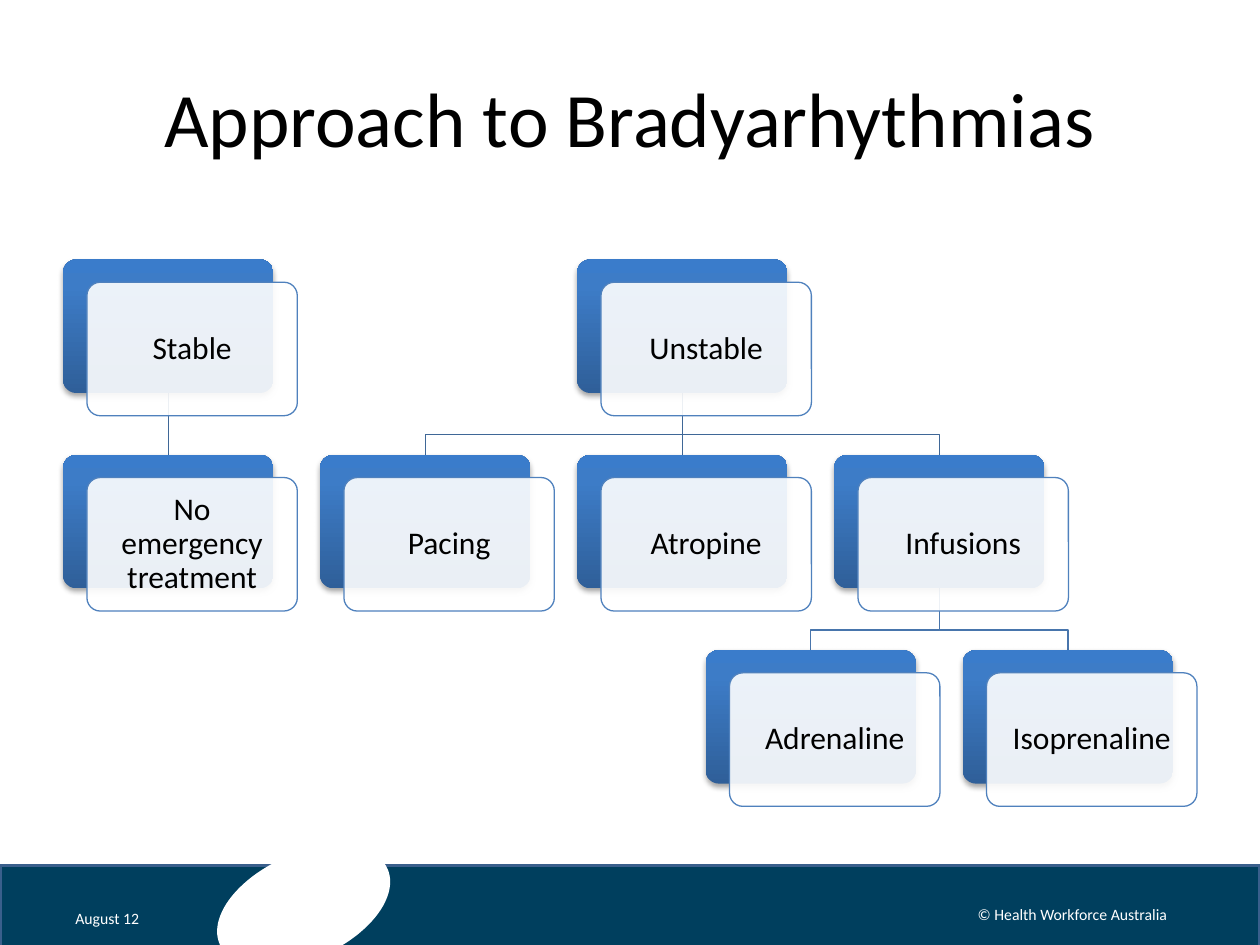
"""Build the slide on the approach to bradyarrhythmias as a decision tree."""
import pptx
import pptx.dml.color
import pptx.enum.shapes
import pptx.enum.text
import pptx.oxml
import pptx.util

Inches = pptx.util.Inches
Pt = pptx.util.Pt
Color = pptx.dml.color.RGBColor.from_string
Shape = pptx.enum.shapes.MSO_SHAPE
Align = pptx.enum.text.PP_ALIGN
Middle = pptx.enum.text.MSO_ANCHOR.MIDDLE
NS = 'xmlns:a="http://schemas.openxmlformats.org/drawingml/2006/main"'


class Theme:
    font = "Calibri"
    ink = "000000"
    paper = "FFFFFF"
    band = "003F5E"
    rim = "3A5F8C"
    edge = "4F81BD"
    links = {1: "3F6797", 2: "4875AC"}
    stops = ((0, "2F5F99"), (80, "3D7CC7"), (100, "3A7CCB"))
    title, label, foot = 44, 18, 9


def write(shape, text, size, color, align):
    frame = shape.text_frame
    frame.word_wrap = True
    frame.vertical_anchor = Middle
    para = frame.paragraphs[0]
    para.text = text
    para.alignment = align
    para.font.name = Theme.font
    para.font.size = Pt(size)
    para.font.color.rgb = Color(color)
    return para


def draw(kind, left, top, width, height, fill=None, line=None, weight=0.75):
    shape = slide.shapes.add_shape(
        kind, Inches(left), Inches(top), Inches(width), Inches(height))
    shape.shadow.inherit = False
    if fill:
        shape.fill.solid()
        shape.fill.fore_color.rgb = Color(fill)
    if line:
        shape.line.color.rgb = Color(line)
        shape.line.width = Pt(weight)
    else:
        shape.line.fill.background()
    return shape


deck = pptx.Presentation()
deck.slide_width, deck.slide_height = Inches(10), Inches(7.5)
slide = deck.slides.add_slide(deck.slide_layouts[5])
for spot in list(slide.placeholders):
    if spot != slide.shapes.title:
        spot.element.getparent().remove(spot.element)

title = slide.shapes.title
title.left, title.top = Inches(0.5), Inches(0.3)
title.width, title.height = Inches(9), Inches(1.25)
write(title, "Approach to Bradyarhythmias", Theme.title, Theme.ink, Align.CENTER)

draw(Shape.RECTANGLE, 0, 6.87, 10, 0.65, Theme.band, Theme.rim, 2)
oval = draw(Shape.OVAL, 1.68, 6.78, 1.46, 0.83, Theme.paper)
oval.rotation = 335.7

wide, high = 1.67, 1.06
left, top = 0.5, 2.06
step, drop = 2.04, 1.55
tree = {
    "Stable": (0, 0, None),
    "No emergency treatment": (0, 1, "Stable"),
    "Unstable": (2, 0, None),
    "Pacing": (1, 1, "Unstable"),
    "Atropine": (2, 1, "Unstable"),
    "Infusions": (3, 1, "Unstable"),
    "Adrenaline": (2.5, 2, "Infusions"),
    "Isoprenaline": (3.5, 2, "Infusions"),
}

for col, row, parent in tree.values():
    if parent is None:
        continue
    start = Inches(left + step * tree[parent][0] + wide / 2)
    end = Inches(left + step * col + wide / 2)
    base = Inches(top + drop * (row - 1) + high)
    bend = base + Inches(0.33)
    head = Inches(top + drop * row)
    if start == end:
        link = slide.shapes.add_connector(
            pptx.enum.shapes.MSO_CONNECTOR.STRAIGHT, start, base, end, head)
        link.element.spPr.append(pptx.oxml.parse_xml(f"<a:effectLst {NS}/>"))
    else:
        path = slide.shapes.build_freeform(start, base)
        path.add_line_segments([(start, bend), (end, bend), (end, head)], close=False)
        link = path.convert_to_shape()
        link.shadow.inherit = False
        link.fill.background()
    link.line.color.rgb = Color(Theme.links[row])
    link.line.width = Pt(0.75)

stops = "".join(
    f'<a:gs pos="{pos * 1000}"><a:srgbClr val="{tone}"/></a:gs>'
    for pos, tone in Theme.stops)
blend = (f'<a:gradFill {NS} rotWithShape="1"><a:gsLst>{stops}</a:gsLst>'
         '<a:lin ang="16200000" scaled="0"/></a:gradFill>')
shade = (f'<a:outerShdw {NS} blurRad="{Pt(3.1)}" dist="{Pt(1.8)}" dir="5400000" '
         f'rotWithShape="0"><a:srgbClr val="{Theme.ink}"><a:alpha val="35000"/>'
         '</a:srgbClr></a:outerShdw>')
alpha = f'<a:alpha {NS} val="90000"/>'

for name, (col, row, parent) in tree.items():
    x, y = left + step * col, top + drop * row
    back = draw(Shape.ROUNDED_RECTANGLE, x, y, wide, high)
    back.adjustments[0] = 0.1
    props = back.element.spPr
    props.insert(2, pptx.oxml.parse_xml(blend))
    props.find(pptx.oxml.ns.qn("a:effectLst")).append(pptx.oxml.parse_xml(shade))

    card = draw(Shape.ROUNDED_RECTANGLE, x + 0.19, y + 0.18, wide, high,
                Theme.paper, Theme.edge)
    card.adjustments[0] = 0.1
    tint = card.element.spPr.find(pptx.oxml.ns.qn("a:solidFill"))
    tint[0].append(pptx.oxml.parse_xml(alpha))
    frame = card.text_frame
    frame.margin_left = frame.margin_right = Inches(0.07)
    frame.margin_top = frame.margin_bottom = Inches(0.07)
    para = write(card, name, Theme.label, Theme.ink, Align.CENTER)
    para.line_spacing = 0.9

for text, x, y, w, h, align in (
    ("August 12", 0.5, 7.14, 0.8, 0.29, Align.LEFT),
    ("© Health Workforce Australia", 7.44, 7.06, 2.14, 0.4, Align.CENTER),
):
    box = slide.shapes.add_textbox(Inches(x), Inches(y), Inches(w), Inches(h))
    write(box, text, Theme.foot, Theme.paper, align)

deck.save("out.pptx")
